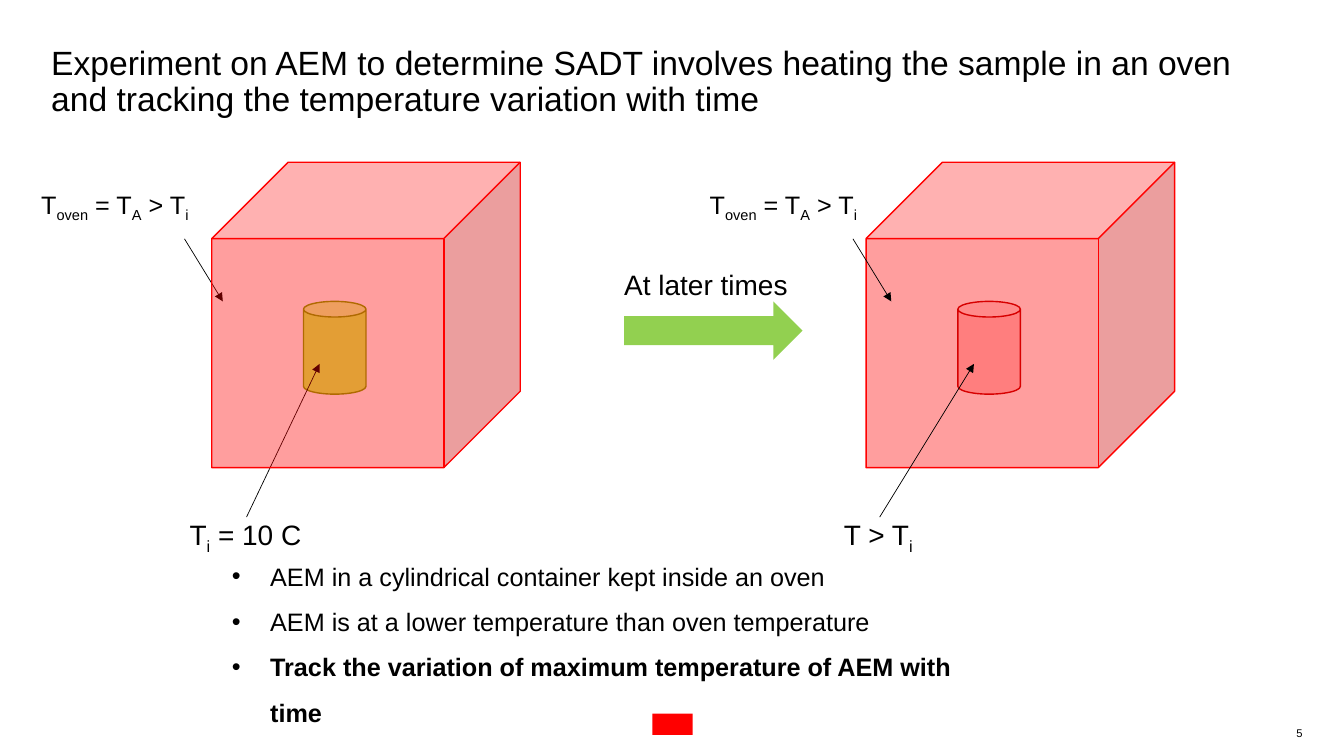
from lxml.etree import SubElement
from pptx import Presentation
from pptx.dml.color import RGBColor
from pptx.enum.shapes import MSO_CONNECTOR, MSO_SHAPE
from pptx.enum.text import MSO_ANCHOR, PP_ALIGN
from pptx.oxml.ns import qn
from pptx.util import Inches, Pt

deck = Presentation()
deck.slide_width = Inches(13.33)
deck.slide_height = Inches(7.5)
page = deck.slides.add_slide(deck.slide_layouts[6])


def add_block(kind, place, fill, line=None, opacity=None):
    block = page.shapes.add_shape(kind, *[Inches(value) for value in place])
    block.shadow.inherit = False
    block.fill.solid()
    block.fill.fore_color.rgb = RGBColor.from_string(fill)
    if opacity:
        color = block.fill._xPr.find(f"{qn('a:solidFill')}/{qn('a:srgbClr')}")
        SubElement(color, qn("a:alpha"), val=str(opacity * 1000))
    if line:
        block.line.color.rgb = RGBColor.from_string(line)
        block.line.width = Pt(1)
    else:
        block.line.fill.background()


def add_text(place, pieces, size, inset=True, wrap=False):
    box = page.shapes.add_textbox(*[Inches(value) for value in place])
    frame = box.text_frame
    frame.word_wrap = wrap
    if not inset:
        frame.margin_left = frame.margin_right = 0
        frame.margin_top = frame.margin_bottom = 0
    for index, piece in enumerate(pieces):
        span = frame.paragraphs[0].add_run()
        span.text = piece
        span.font.name = "Arial"
        span.font.size = Pt(size)
        span.font.color.rgb = RGBColor.from_string("000000")
        if index % 2:
            span._r.get_or_add_rPr().set("baseline", "-25000")
    return box


add_block(MSO_SHAPE.RECTANGLE, (6.47, 7.08, 0.4, 0.21), "FF0000")
number = add_text((12.68, 7.21, 0.24, 0.13), ["5"], 8, inset=False, wrap=True)
number.text_frame.paragraphs[0].alignment = PP_ALIGN.RIGHT
title = add_text(
    (0.41, 0.41, 12.49, 0.9),
    ["Experiment on AEM to determine SADT involves heating the sample in an oven "
     "and tracking the temperature variation with time"],
    24, wrap=True)
title.text_frame.paragraphs[0].line_spacing = 0.9

left_oven, right_oven = 2.1, 8.59
oven_top, oven_width, oven_height = 1.61, 3.06, 3.03
can_offset, can_top = 0.91, 2.99

add_block(MSO_SHAPE.CAN, (right_oven + can_offset, can_top, 0.62, 0.92), "FFCCCC", "BF0000")
add_block(MSO_SHAPE.CUBE, (right_oven, oven_top, oven_width, oven_height), "FF0000", "FF0000", 38)
add_block(MSO_SHAPE.CAN, (left_oven + can_offset, can_top, 0.62, 0.92), "D3FF57", "80AC00")

stages = [
    (left_oven, 0.31, 1.13, ["T", "i", " = 10 C"]),
    (right_oven, 6.94, 0.71, ["T > T", "i"]),
]
for oven_left, label_left, sample_width, sample_text in stages:
    add_text((label_left, 1.83, 2.16, 0.4), ["T", "oven", " = T", "A", " > T", "i"], 18, wrap=True)
    sample_left = oven_left - 0.22
    sample = add_text((sample_left, 5.13, sample_width, 0.34), sample_text, 20, inset=False)
    pointers = [
        (sample_left + sample_width / 2, 5.13, oven_left + 1.07, 3.61, sample),
        (label_left + 1.52, 2.37, label_left + 1.9, 2.99, None),
    ]
    for *ends, source in pointers:
        pointer = page.shapes.add_connector(
            MSO_CONNECTOR.STRAIGHT, *[Inches(value) for value in ends])
        if source:
            pointer.begin_connect(source, 0)
        pointer.line.color.rgb = RGBColor.from_string("000000")
        pointer.line.width = Pt(0.5)
        SubElement(pointer.line._get_or_add_ln(), qn("a:tailEnd"), type="triangle")
        SubElement(pointer._element.spPr, qn("a:effectLst"))

add_block(MSO_SHAPE.CUBE, (left_oven, oven_top, oven_width, oven_height), "FF0000", "FF0000", 38)
add_block(MSO_SHAPE.RIGHT_ARROW, (6.19, 2.99, 1.77, 0.58), "92D050")
add_text((6.19, 2.65, 1.7, 0.34), ["At later times"], 20, inset=False)

notes = [
    ("AEM in a cylindrical container kept inside an oven", False),
    ("AEM is at a lower temperature than oven temperature", False),
    ("Track the variation of maximum temperature of AEM with time", True),
]
box = add_text((2.3, 5.66, 7.68, 1.31), [], 18, inset=False, wrap=True)
box.text_frame.vertical_anchor = MSO_ANCHOR.MIDDLE
for index, (note, bold) in enumerate(notes):
    para = box.text_frame.add_paragraph() if index else box.text_frame.paragraphs[0]
    para.line_spacing = 1.5
    properties = para._p.get_or_add_pPr()
    properties.set("marL", str(Inches(0.38)))
    properties.set("indent", str(-Inches(0.38)))
    SubElement(properties, qn("a:buFont"), typeface="Arial")
    SubElement(properties, qn("a:buChar"), char="•")
    span = para.add_run()
    span.text = note
    span.font.name = "Arial"
    span.font.size = Pt(18)
    span.font.bold = bold
    span.font.color.rgb = RGBColor.from_string("000000")

deck.save("out.pptx")
